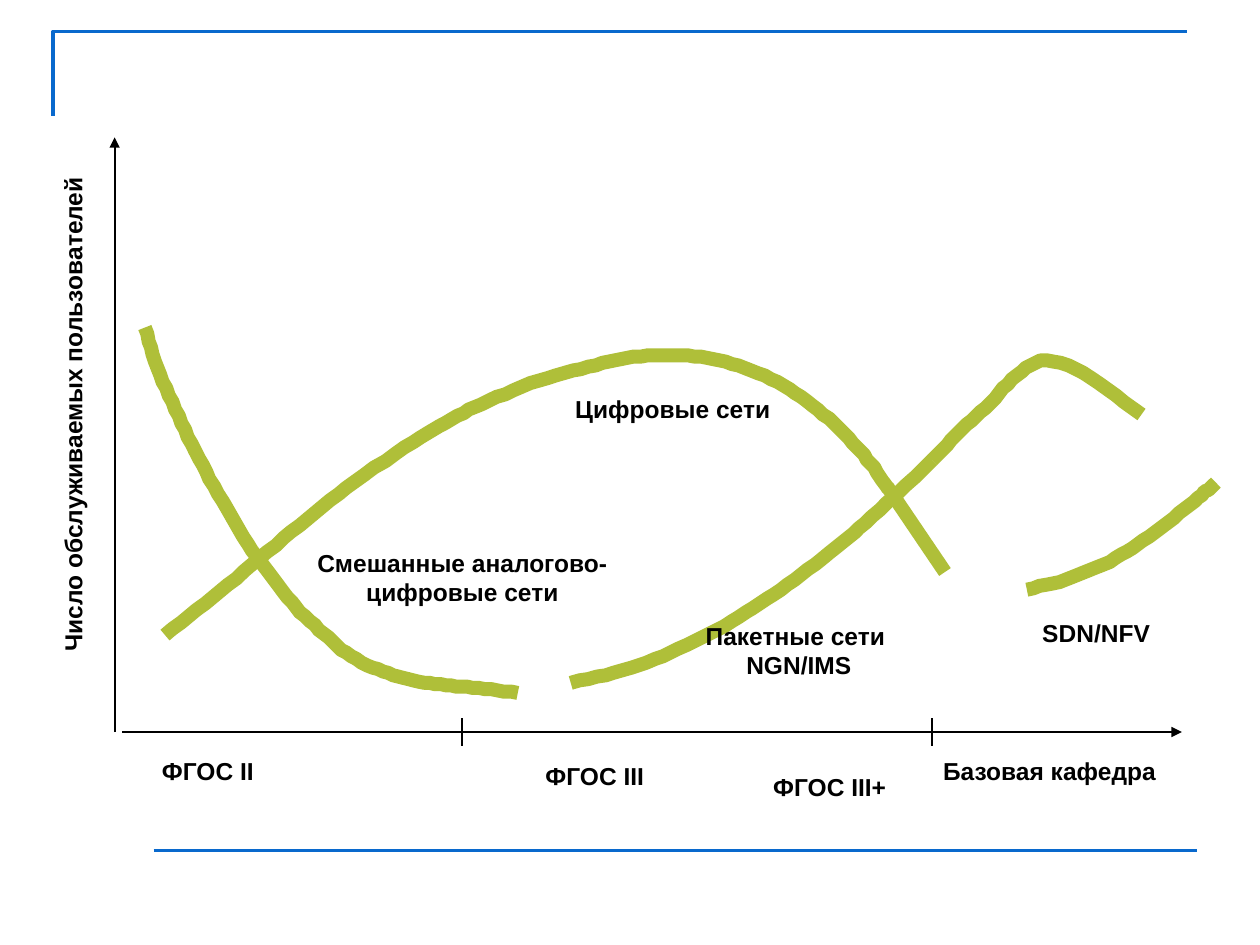
from dataclasses import dataclass

from lxml.etree import SubElement
from pptx import Presentation
from pptx.dml.color import RGBColor as RGB
from pptx.enum.shapes import MSO_CONNECTOR as Connector
from pptx.enum.text import MSO_AUTO_SIZE as AutoSize, PP_ALIGN as Align
from pptx.oxml.ns import qn
from pptx.util import Emu, Pt

PX = 9144


@dataclass(frozen=True)
class Theme:
    font: str = "Arial"
    size: float = 14
    ink: str = "000000"
    frame: str = "0969CD"
    curve: str = "AFBF39"
    axis_width: float = 1.25
    frame_width: float = 2
    curve_width: float = 8


def smooth(points, steps=6):
    def reflect(a, b):
        return 2 * a[0] - b[0], 2 * a[1] - b[1]

    knots = [reflect(points[0], points[1]), *points, reflect(points[-1], points[-2])]
    result = [points[0]]
    for quad in zip(knots, knots[1:], knots[2:], knots[3:]):
        for i in range(1, steps + 1):
            t = i / steps
            result.append(tuple(
                (2 * b + (c - a) * t + (2 * a - 5 * b + 4 * c - d) * t ** 2
                 + (3 * b - a - 3 * c + d) * t ** 3) / 2
                for a, b, c, d in zip(*quad)
            ))
    return result


class SlideBuilder:
    def __init__(self, s, theme):
        self.s = s
        self.theme = theme

    def stroke(self, line, color, width):
        line.color.rgb = RGB.from_string(color)
        line.width = Pt(width)

    def outline(self, points, color, width):
        start, *rest = points
        builder = self.s.shapes.build_freeform(*start, scale=PX)
        builder.add_line_segments(rest, close=False)
        sp = builder.convert_to_shape()
        sp.shadow.inherit = False
        sp.fill.background()
        self.stroke(sp.line, color, width)

    def curve(self, points):
        self.outline(smooth(points), self.theme.curve, self.theme.curve_width)

    def line(self, x1, y1, x2, y2, color, width, arrow=False):
        ends = [Emu(v * PX) for v in (x1, y1, x2, y2)]
        sp = self.s.shapes.add_connector(Connector.STRAIGHT, *ends)
        self.stroke(sp.line, color, width)
        if arrow:
            SubElement(sp.line._get_or_add_ln(), qn("a:tailEnd"), type="triangle")
        SubElement(sp._element.spPr, qn("a:effectLst"))

    def axis(self, x1, y1, x2, y2, arrow=False):
        self.line(x1, y1, x2, y2, self.theme.ink, self.theme.axis_width, arrow)

    def label(self, lines, x, y, w, h, rotation=0, wrap=True):
        sp = self.s.shapes.add_textbox(*[Emu(v * PX) for v in (x, y, w, h)])
        sp.rotation = rotation
        tf = sp.text_frame
        tf.word_wrap = wrap
        tf.auto_size = AutoSize.SHAPE_TO_FIT_TEXT
        p = tf.paragraphs[0]
        for i, text in enumerate(lines):
            if i:
                p.add_line_break()
            p.add_run().text = text
        p.alignment = Align.CENTER
        p.font.name = self.theme.font
        p.font.size = Pt(self.theme.size)
        p.font.bold = True
        p.font.color.rgb = RGB.from_string(self.theme.ink)


ANALOG = [(115, 260), (125, 292), (139, 325), (155, 358), (173, 392), (197, 432),
          (216, 458), (235, 482), (257, 503), (279, 521), (304, 533), (328, 540),
          (354, 544), (380, 546), (411, 550)]
DIGITAL = [(131, 504), (169, 474), (206, 443), (244, 412), (282, 382), (328, 351),
           (358, 333), (388, 318), (428, 302), (467, 291), (498, 284), (530, 282),
           (561, 284), (591, 292), (622, 306), (649, 325), (674, 348), (691, 368),
           (705, 388)]
PACKET = [(453, 542), (494, 532), (532, 518), (569, 500), (603, 479), (636, 456),
          (668, 431), (698, 405), (740, 365)]
PACKET_PEAK = [(740, 365), (763, 341), (786, 320), (807, 298), (831, 286),
               (866, 300), (906, 329)]
SDN = [(815, 468), (846, 460), (876, 448), (903, 432), (928, 414), (951, 395),
       (965, 383)]

LABELS = [
    (["Смешанные аналогово-цифровые сети"], 227, 430, 280, 57),
    (["Цифровые сети"], 374, 308, 320, 34),
    (["Пакетные сети ", "NGN/IMS"], 504, 488, 260, 57),
    (["Число обслуживаемых пользователей"], -186, 312, 488, 34, 270),
    (["ФГОС II"], 71, 595, 188, 34),
    (["Базовая кафедра"], 685, 595, 296, 34),
    (["ФГОС III"], 378, 599, 188, 34),
    (["SDN/NFV"], 740, 486, 260, 34),
    (["ФГОС III+"], 603, 608, 111, 34, 0, False),
]


def main():
    prs = Presentation()
    prs.slide_width, prs.slide_height = Emu(1000 * PX), Emu(750 * PX)
    theme = Theme()
    b = SlideBuilder(prs.slides.add_slide(prs.slide_layouts[6]), theme)

    b.outline([(42, 92), (42, 25), (942, 25)], theme.frame, theme.frame_width)
    b.line(122, 675, 950, 675, theme.frame, theme.frame_width)

    for points in (PACKET, ANALOG, DIGITAL, SDN, PACKET_PEAK):
        b.curve(points)
    b.outline([(704, 386), (750, 454)], theme.curve, theme.curve_width)

    b.axis(91, 581, 91, 109, arrow=True)
    b.axis(97, 581, 938, 581, arrow=True)
    for x in (367, 740):
        b.axis(x, 592, x, 570)

    for label in LABELS:
        b.label(*label)

    prs.save("out.pptx")


if __name__ == "__main__":
    main()
